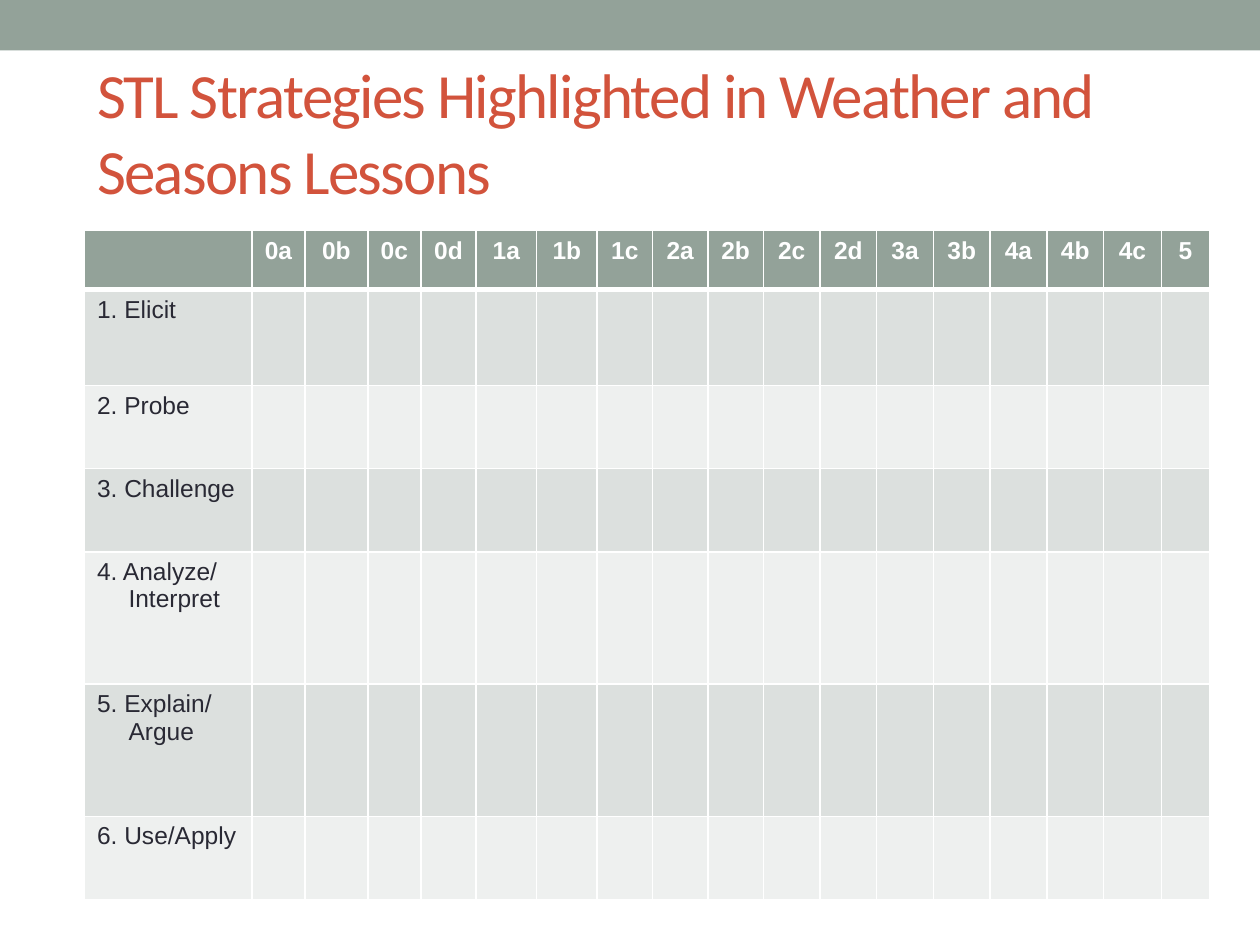
from pptx import Presentation
from pptx.dml.color import RGBColor
from pptx.enum.shapes import MSO_SHAPE
from pptx.enum.text import MSO_ANCHOR, MSO_AUTO_SIZE, PP_ALIGN
from pptx.oxml.ns import qn
from pptx.util import Inches, Pt
from lxml.etree import SubElement

SAGE = RGBColor(0x93, 0xA2, 0x99)
RUST = RGBColor(0xD2, 0x53, 0x3C)
INK = RGBColor(0x29, 0x29, 0x34)
WHITE = RGBColor(0xFF, 0xFF, 0xFF)
BANDS = [RGBColor(0xDC, 0xE0, 0xDE), RGBColor(0xEE, 0xF0, 0xEF)]

LESSONS = ["0a", "0b", "0c", "0d", "1a", "1b", "1c", "2a", "2b", "2c", "2d",
           "3a", "3b", "4a", "4b", "4c", "5"]
STRATEGIES = ["1. Elicit", "2. Probe", "3. Challenge", "4. Analyze/ Interpret",
              "5. Explain/ Argue", "6. Use/Apply"]
COL_WIDTHS = [1.33, 0.42, 0.5, 0.42, 0.44, 0.48, 0.48, 0.44, 0.44, 0.44,
              0.45, 0.45, 0.45, 0.45, 0.45, 0.45, 0.46, 0.38]
ROW_HEIGHTS = [0.47, 0.76, 0.66, 0.66, 1.05, 1.05, 0.66]


def apply(target, values):
    for name, value in values.items():
        setattr(target, name, value)


class SlideBuilder:
    title_font = {"name": "Calibri", "size": Pt(36), "bold": False}
    cell_font = {"name": "Arial", "size": Pt(14)}

    def __init__(self, prs):
        self.s = prs.slides.add_slide(prs.slide_layouts[5])

    def bar(self, x, y, w, h, color):
        sp = self.s.shapes.add_shape(MSO_SHAPE.RECTANGLE, Inches(x), Inches(y),
                                     Inches(w), Inches(h))
        sp.shadow.inherit = False
        sp.fill.solid()
        sp.fill.fore_color.rgb = color
        sp.line.fill.background()

    def title(self, text, x, y, w, h):
        sp = self.s.shapes.title
        apply(sp, {"left": Inches(x), "top": Inches(y),
                   "width": Inches(w), "height": Inches(h)})
        tf = sp.text_frame
        apply(tf, {"word_wrap": True, "auto_size": MSO_AUTO_SIZE.NONE,
                   "vertical_anchor": MSO_ANCHOR.MIDDLE})
        p = tf.paragraphs[0]
        p.alignment = PP_ALIGN.LEFT
        r = p.add_run()
        r.text = text
        apply(r.font, self.title_font)
        r.font.color.rgb = RUST
        r.font._element.set("spc", "-100")

    def borders(self, cell, top, bottom):
        tcPr = cell._tc.get_or_add_tcPr()
        for side, width in {"L": 1, "R": 1, "T": top, "B": bottom}.items():
            ln = SubElement(tcPr, qn(f"a:ln{side}"), w=str(Pt(width)))
            fill = SubElement(ln, qn("a:solidFill"))
            SubElement(fill, qn("a:srgbClr"), val=str(WHITE))

    def cell_text(self, cell, text, color, bold):
        p = cell.text_frame.paragraphs[0]
        r = p.add_run()
        r.text = text
        apply(r.font, {**self.cell_font, "bold": bold})
        r.font.color.rgb = color
        return p

    def strategy_table(self, x, y):
        table = self.s.shapes.add_table(
            len(ROW_HEIGHTS), len(COL_WIDTHS), Inches(x), Inches(y),
            Inches(sum(COL_WIDTHS)), Inches(sum(ROW_HEIGHTS))).table
        for col, width in zip(table.columns, COL_WIDTHS):
            col.width = Inches(width)
        for i, (row, height) in enumerate(zip(table.rows, ROW_HEIGHTS)):
            row.height = Inches(height)
            for cell in row.cells:
                self.borders(cell, 3 if i == 1 else 1, 3 if i == 0 else 1)
                cell.fill.solid()
                cell.fill.fore_color.rgb = BANDS[(i - 1) % 2] if i else SAGE
        for j, lesson in enumerate(LESSONS, 1):
            p = self.cell_text(table.cell(0, j), lesson, WHITE, True)
            p.alignment = PP_ALIGN.CENTER
        for i, strategy in enumerate(STRATEGIES, 1):
            p = self.cell_text(table.cell(i, 0), strategy, INK, False)
            p.space_after = Pt(12 if i == 1 else 6)
            pPr = p._p.get_or_add_pPr()
            pPr.set("marL", str(Inches(0.25)))
            pPr.set("indent", str(Inches(-0.25)))


def main():
    prs = Presentation()
    apply(prs, {"slide_width": Inches(10), "slide_height": Inches(7.5)})
    slide = SlideBuilder(prs)
    slide.bar(0, 0, 10, 0.4, SAGE)
    slide.title("STL Strategies Highlighted in Weather and Seasons Lessons",
                0.67, 0.5, 8.83, 1.08)
    slide.strategy_table(0.67, 1.83)
    prs.save("out.pptx")


if __name__ == "__main__":
    main()
